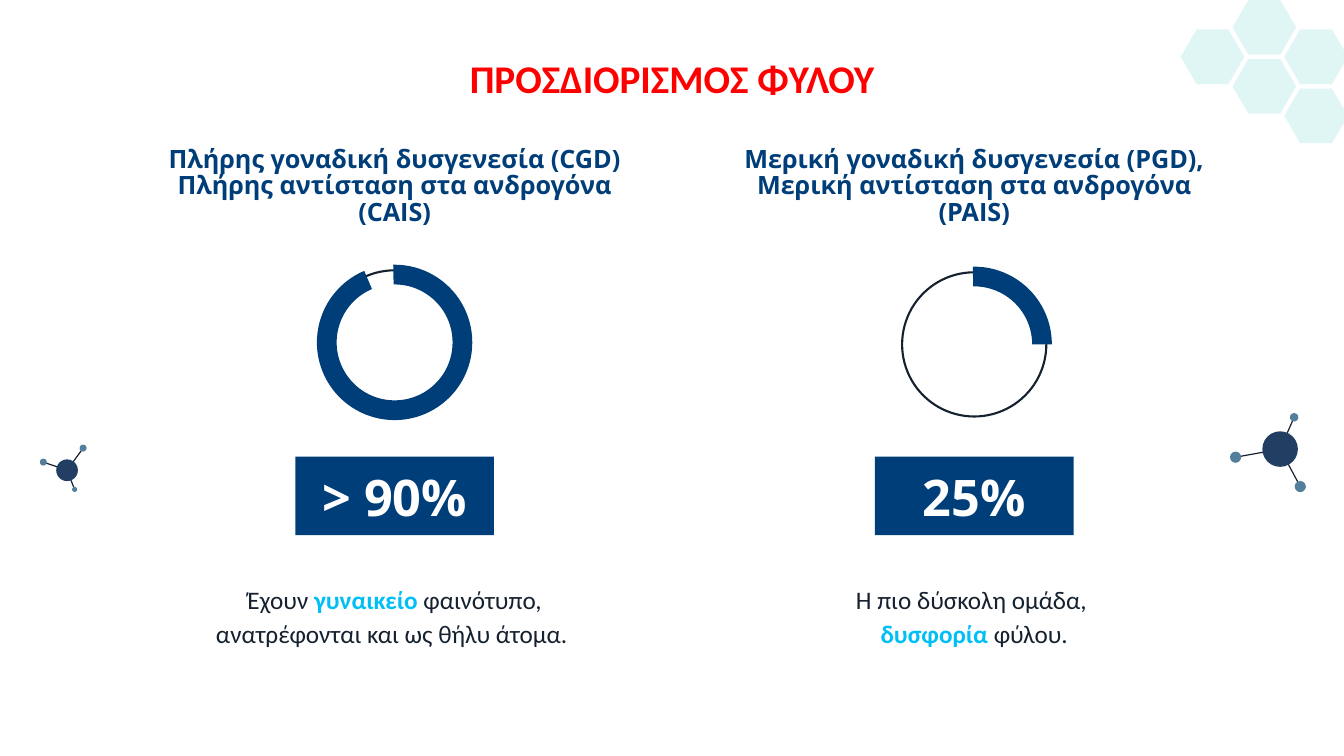
from lxml import etree
from pptx import Presentation
from pptx.dml.color import RGBColor
from pptx.enum import shapes, text
from pptx.oxml import ns
from pptx.util import Pt

NAVY, INK, SKY, RED, WHITE = "003E79", "15212F", "00BFF6", "FF0000", "FFFFFF"
MINT, ATOM, SATELLITE = "E0F6F4", "223E63", "537F9C"
COMPARISON_LAYOUT = 4
INSET = 9.4


def colour(hex_string):
    return RGBColor.from_string(hex_string)


def add_shape(slide, kind, left, top, width, height, fill=None, line=None):
    shape = slide.shapes.add_shape(kind, Pt(left), Pt(top), Pt(width), Pt(height))
    shape.shadow.inherit = False
    if fill:
        shape.fill.solid()
        shape.fill.fore_color.rgb = colour(fill)
    else:
        shape.fill.background()
    if line:
        shape.line.color.rgb = colour(line)
        shape.line.width = Pt(1.5)
    else:
        shape.line.fill.background()
    return shape


def add_dot(slide, x, y, diameter, fill):
    corner = x - diameter / 2, y - diameter / 2
    add_shape(slide, shapes.MSO_SHAPE.OVAL, *corner, diameter, diameter, fill)


def set_frame(shape, anchor, inset=INSET):
    frame = shape.text_frame
    frame.word_wrap = True
    frame.auto_size = text.MSO_AUTO_SIZE.NONE
    frame.vertical_anchor = anchor
    frame.margin_left = frame.margin_right = Pt(inset)
    frame.margin_top = frame.margin_bottom = Pt(inset)
    return frame


def style_paragraph(paragraph, font_name, size, hex_string, bold, spacing=1.0):
    paragraph.alignment = text.PP_ALIGN.CENTER
    paragraph.line_spacing = spacing
    paragraph.space_before = paragraph.space_after = Pt(0)
    font = paragraph.font
    font.name, font.size, font.bold = font_name, Pt(size), bold
    font.color.rgb = colour(hex_string)


def fill_body(placeholder, box, anchor, lines, *style):
    """Each line is a list of (text, is_highlighted) pairs."""
    left, top, width, height = map(Pt, box)
    placeholder.left, placeholder.top = left, top
    placeholder.width, placeholder.height = width, height
    frame = set_frame(placeholder, anchor)
    for index, line in enumerate(lines):
        paragraph = frame.add_paragraph() if index else frame.paragraphs[0]
        properties = paragraph._p.get_or_add_pPr()
        properties.set("marL", "0")
        properties.set("indent", "0")
        etree.SubElement(properties, ns.qn("a:buNone"))
        style_paragraph(paragraph, *style)
        for words, highlighted in line:
            run = paragraph.add_run()
            run.text = words
            if highlighted:
                run.font.bold = True
                run.font.color.rgb = colour(SKY)


def add_honeycomb(slide, left, top):
    width, height, column_step, row_step = 45.4, 39, 37, 21.1
    for column, row in [(0, 1), (1, 0), (1, 2), (2, 1), (2, 3)]:
        cell = add_shape(slide, shapes.MSO_SHAPE.HEXAGON, left + column * column_step,
                         top + row * row_step, width, height, MINT)
        cell.adjustments[0] = 0.29


def add_molecule(slide, x, y, diameter, satellites):
    """Satellites are (x offset, y offset, diameter) from the central atom."""
    for dx, dy, _ in satellites:
        bond = slide.shapes.add_connector(shapes.MSO_CONNECTOR.STRAIGHT,
                                          Pt(x), Pt(y), Pt(x + dx), Pt(y + dy))
        bond.line.color.rgb = colour(INK)
        bond.line.width = Pt(0.85)
        etree.SubElement(bond._element.spPr, ns.qn("a:effectLst"))
    add_dot(slide, x, y, diameter, ATOM)
    for dx, dy, size in satellites:
        add_dot(slide, x + dx, y + dy, size, SATELLITE)


def add_title(slide, words):
    title = slide.shapes.title
    title.left, title.top, title.width, title.height = Pt(0), Pt(35.3), Pt(960), Pt(41)
    frame = set_frame(title, text.MSO_ANCHOR.MIDDLE, 3.6)
    frame.text = words
    style_paragraph(frame.paragraphs[0], "Calibri", 28, RED, True)


def add_ring(slide, x, y, end_angle):
    """Thin circle with a thick arc running clockwise from the top to end_angle."""
    circle, arc = 103, 111
    add_shape(slide, shapes.MSO_SHAPE.OVAL, x - circle / 2, y - circle / 2,
              circle, circle, line=INK)
    share = add_shape(slide, shapes.MSO_SHAPE.BLOCK_ARC, x - arc / 2, y - arc / 2,
                      arc, arc, NAVY)
    degree = 0.6
    share.adjustments[0] = 269 * degree
    share.adjustments[1] = end_angle * degree
    share.adjustments[2] = 0.127


def add_column(slide, box, placeholders, heading, end_angle, ring_drop, percentage, outcome):
    left, top, width = box
    middle = left + width / 2
    heading_holder, outcome_holder = placeholders
    fill_body(heading_holder, (left, top, width, 64.8), text.MSO_ANCHOR.BOTTOM,
              heading, "Open Sans", 18, NAVY, True, 0.88)
    add_ring(slide, middle, top + 138 + ring_drop, end_angle)

    label = add_shape(slide, shapes.MSO_SHAPE.RECTANGLE, middle - 71, top + 219.6,
                      142, 56, NAVY)
    frame = set_frame(label, text.MSO_ANCHOR.MIDDLE)
    frame.text = percentage
    style_paragraph(frame.paragraphs[0], "Open Sans", 36, WHITE, True)

    fill_body(outcome_holder, (middle - 160, top + 298.8, 320, 81), text.MSO_ANCHOR.TOP,
              outcome, "Calibri", 18, INK, False, 1.12)


def main():
    presentation = Presentation()
    presentation.slide_width, presentation.slide_height = Pt(960), Pt(540)
    slide = presentation.slides.add_slide(presentation.slide_layouts[COMPARISON_LAYOUT])
    holders = slide.placeholders

    add_honeycomb(slide, 843.4, 0)
    add_molecule(slide, 914.4, 320.8, 25.4,
                 [(14.4, 26.8, 8), (-31.8, 5.8, 8), (10, -22.7, 6)])
    add_molecule(slide, 47.9, 335.9, 15.5,
                 [(-16.9, -5.8, 5), (11.5, -15.8, 5), (5.4, 13.7, 3.6)])
    add_title(slide, "ΠΡΟΣΔΙΟΡΙΣΜΟΣ ΦΥΛΟΥ")

    add_column(slide, (93.6, 106.6, 376.6), (holders[1], holders[2]),
               [[("Πλήρης γοναδική δυσγενεσία (CGD)", False)],
                [("Πλήρης αντίσταση στα ανδρογόνα (CAIS)", False)]],
               247, 0, "> 90%",
               [[("Έχουν ", False), ("γυναικείο", True), (" φαινότυπο,", False)],
                [("ανατρέφονται και ως θήλυ άτομα. ", False)]])
    add_column(slide, (507.6, 106.6, 376.6), (holders[3], holders[4]),
               [[("Μερική γοναδική δυσγενεσία (PGD), "
                  "Μερική αντίσταση στα ανδρογόνα (PAIS)", False)]],
               0, 1.4, "25%",
               [[("H πιο δύσκολη ομάδα, ", False)],
                [("δυσφορία", True), (" φύλου.", False)]])
    presentation.save("out.pptx")


if __name__ == "__main__":
    main()
